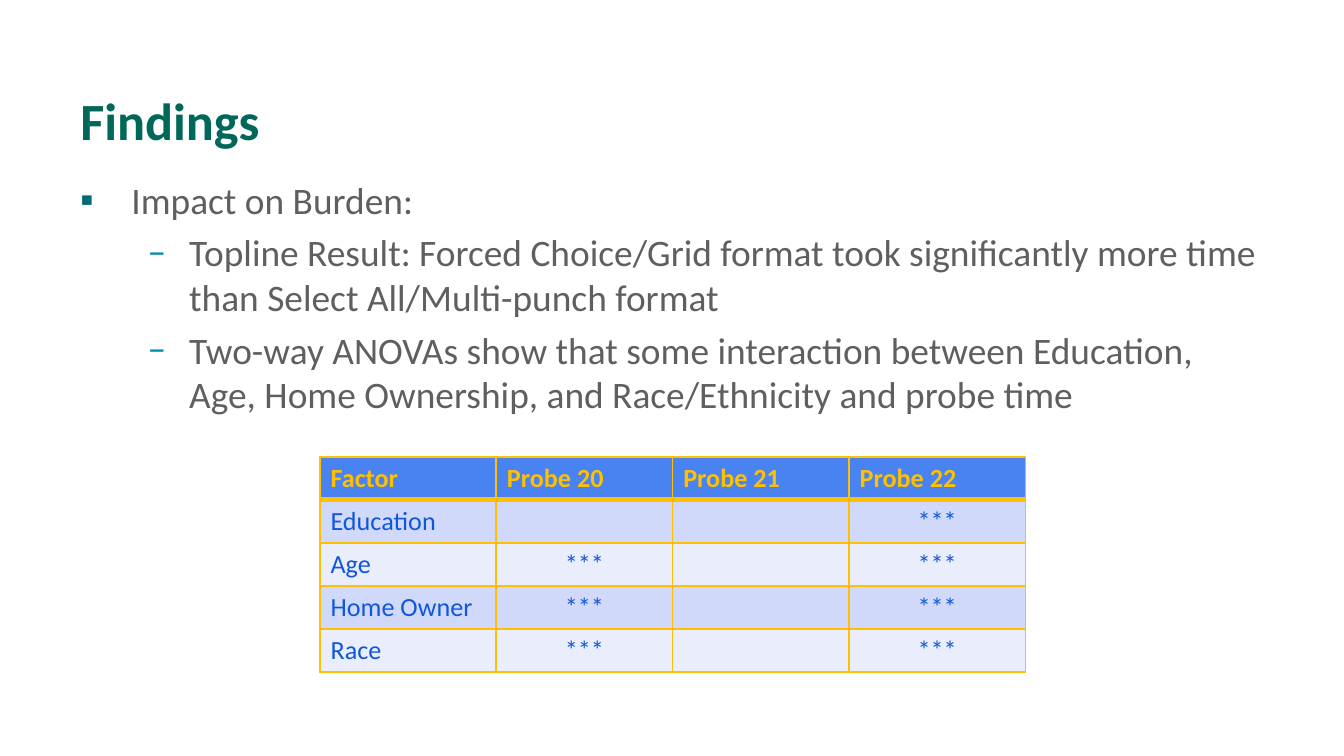
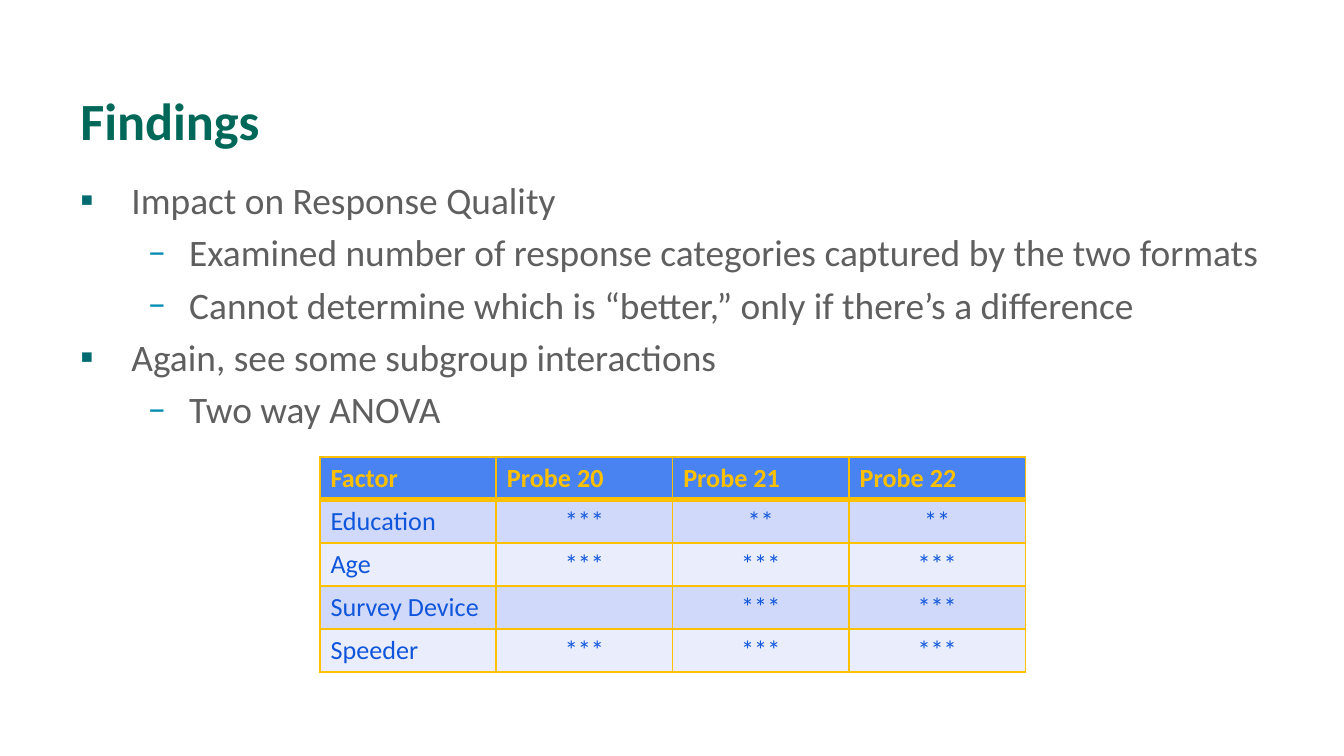
from dataclasses import dataclass

from lxml.etree import SubElement
from pptx import Presentation
from pptx.dml.color import RGBColor
from pptx.enum.text import MSO_ANCHOR, PP_ALIGN
from pptx.oxml import parse_xml
from pptx.oxml.ns import nsdecls, qn
from pptx.slide import Slide
from pptx.table import _Cell
from pptx.text.text import TextFrame, _Paragraph
from pptx.util import Inches, Pt


@dataclass(frozen=True)
class Theme:
    """Colours and type sizes shared by the slides."""

    font: str = "Calibri"
    title: str = "006858"
    body: str = "5F5F5F"
    gold: str = "FFC000"
    header_fill: str = "4983F2"
    cell_text: str = "0F56DC"
    bands: tuple[str, str] = ("D0D9FA", "E9EDFC")
    title_size: int = 28
    body_size: int = 20
    table_size: int = 14


@dataclass(frozen=True)
class Level:
    """The bullet and indents of one outline level."""

    mark: str
    color: str
    margin: float
    hanging: float


@dataclass(frozen=True)
class Bullet:
    """One line of the outline."""

    text: str
    level: int = 0


@dataclass(frozen=True)
class Finding:
    """The content of one slide."""

    bullets: tuple[Bullet, ...]
    rows: tuple[tuple[str, str, str, str], ...]


THEME = Theme()
LEVELS = (Level("▪", "006A71", 0.38, 0.38), Level("–", "008BB0", 0.81, 0.31))
HEADER = ("Factor", "Probe 20", "Probe 21", "Probe 22")
FINDINGS = (
    Finding(
        (
            Bullet("Impact on Burden:"),
            Bullet("Topline Result: Forced Choice/Grid format took significantly "
                   "more time than Select All/Multi-punch format", 1),
            Bullet("Two-way ANOVAs show that some interaction between Education, "
                   "Age, Home Ownership, and Race/Ethnicity and probe time", 1),
        ),
        (
            ("Education", "", "", "***"),
            ("Age", "***", "", "***"),
            ("Home Owner", "***", "", "***"),
            ("Race", "***", "", "***"),
        ),
    ),
    Finding(
        (
            Bullet("Impact on Response Quality"),
            Bullet("Examined number of response categories captured by the two formats", 1),
            Bullet("Cannot determine which is “better,” only if there’s a difference", 1),
            Bullet("Again, see some subgroup interactions"),
            Bullet("Two way ANOVA", 1),
        ),
        (
            ("Education", "***", "**", "**"),
            ("Age", "***", "***", "***"),
            ("Survey Device", "", "***", "***"),
            ("Speeder", "***", "***", "***"),
        ),
    ),
)


def write(para: _Paragraph, text: str, *, size: int, color: str, bold: bool = False) -> None:
    """Add formatted text to a paragraph, or size the paragraph if it is empty."""
    if not text:
        SubElement(para._p, qn("a:endParaRPr"), sz=str(size * 100))
        return
    span = para.add_run()
    span.text = text
    span.font.name = THEME.font
    span.font.size = Pt(size)
    span.font.bold = bold
    span.font.color.rgb = RGBColor.from_string(color)


def add_box(page: Slide, top: float, height: float, anchor: MSO_ANCHOR) -> TextFrame:
    """Add a wrapped text box across the page."""
    box = page.shapes.add_textbox(Inches(0.5), Inches(top), Inches(9), Inches(height))
    frame = box.text_frame
    frame.word_wrap = True
    frame.vertical_anchor = anchor
    return frame


def add_title(page: Slide, text: str) -> None:
    """Add the slide title."""
    para = add_box(page, 0.23, 0.94, MSO_ANCHOR.BOTTOM).paragraphs[0]
    para.line_spacing = Pt(30)
    write(para, text, size=THEME.title_size, color=THEME.title, bold=True)


def set_bullet(para: _Paragraph, level: Level) -> None:
    """Give a paragraph the bullet and indents of its level."""
    properties = para._p.get_or_add_pPr()
    properties.set("marL", str(Inches(level.margin)))
    properties.set("indent", str(-Inches(level.hanging)))
    color = SubElement(properties, qn("a:buClr"))
    SubElement(color, qn("a:srgbClr"), val=level.color)
    SubElement(properties, qn("a:buFont"), typeface=THEME.font)
    SubElement(properties, qn("a:buChar"), char=level.mark)


def add_outline(page: Slide, bullets: tuple[Bullet, ...]) -> None:
    """Add the bulleted outline."""
    frame = add_box(page, 1.27, 3.65, MSO_ANCHOR.TOP)
    for index, bullet in enumerate(bullets):
        para = frame.add_paragraph() if index else frame.paragraphs[0]
        para.level = bullet.level
        if index:
            para.space_before = Pt(THEME.body_size * 0.2)
        set_bullet(para, LEVELS[bullet.level])
        write(para, bullet.text, size=THEME.body_size, color=THEME.body)


def set_borders(cell: _Cell, *, top: int, bottom: int) -> None:
    """Draw the four borders of a cell with widths in points."""
    properties = cell._tc.get_or_add_tcPr()
    widths = {"L": 1, "R": 1, "T": top, "B": bottom}
    for index, (side, width) in enumerate(widths.items()):
        line = parse_xml(
            f'<a:ln{side} {nsdecls("a")} w="{Pt(width)}"><a:solidFill>'
            f'<a:srgbClr val="{THEME.gold}"/></a:solidFill></a:ln{side}>'
        )
        properties.insert(index, line)


def add_factor_table(page: Slide, rows: tuple[tuple[str, str, str, str], ...]) -> None:
    """Add the table of factors by probe."""
    lines = (HEADER, *rows)
    frame = page.shapes.add_table(
        len(lines), len(HEADER), Inches(2.38), Inches(3.4),
        Inches(5.25), Inches(0.32 * len(lines)),
    )
    table = frame.table
    table.horz_banding = False
    for row, line in enumerate(lines):
        header = row == 0
        fill = THEME.header_fill if header else THEME.bands[(row - 1) % 2]
        for column, text in enumerate(line):
            cell = table.cell(row, column)
            cell.margin_left = cell.margin_right = Inches(0.08)
            cell.margin_top = cell.margin_bottom = Inches(0.04)
            cell.fill.solid()
            cell.fill.fore_color.rgb = RGBColor.from_string(fill)
            set_borders(cell, top=3 if row == 1 else 1, bottom=3 if header else 1)
            para = cell.text_frame.paragraphs[0]
            if column and not header:
                para.alignment = PP_ALIGN.CENTER
            write(para, text, size=THEME.table_size, bold=header,
                  color=THEME.gold if header else THEME.cell_text)


def main() -> None:
    """Build and save the deck."""
    deck = Presentation()
    deck.slide_width = Inches(10)
    deck.slide_height = Inches(10 * 9 / 16)
    for finding in FINDINGS:
        page = deck.slides.add_slide(deck.slide_layouts[6])
        add_title(page, "Findings")
        add_outline(page, finding.bullets)
        add_factor_table(page, finding.rows)
    deck.save("out.pptx")


if __name__ == "__main__":
    main()
